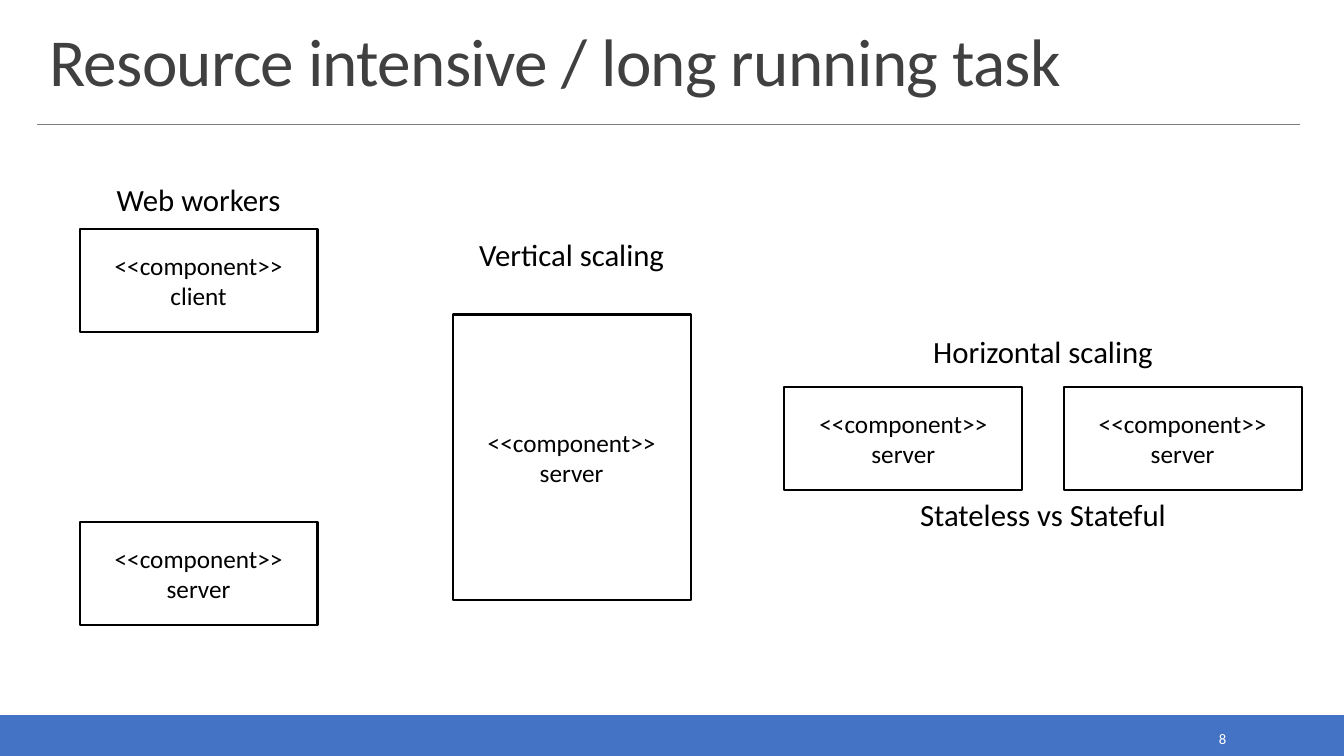
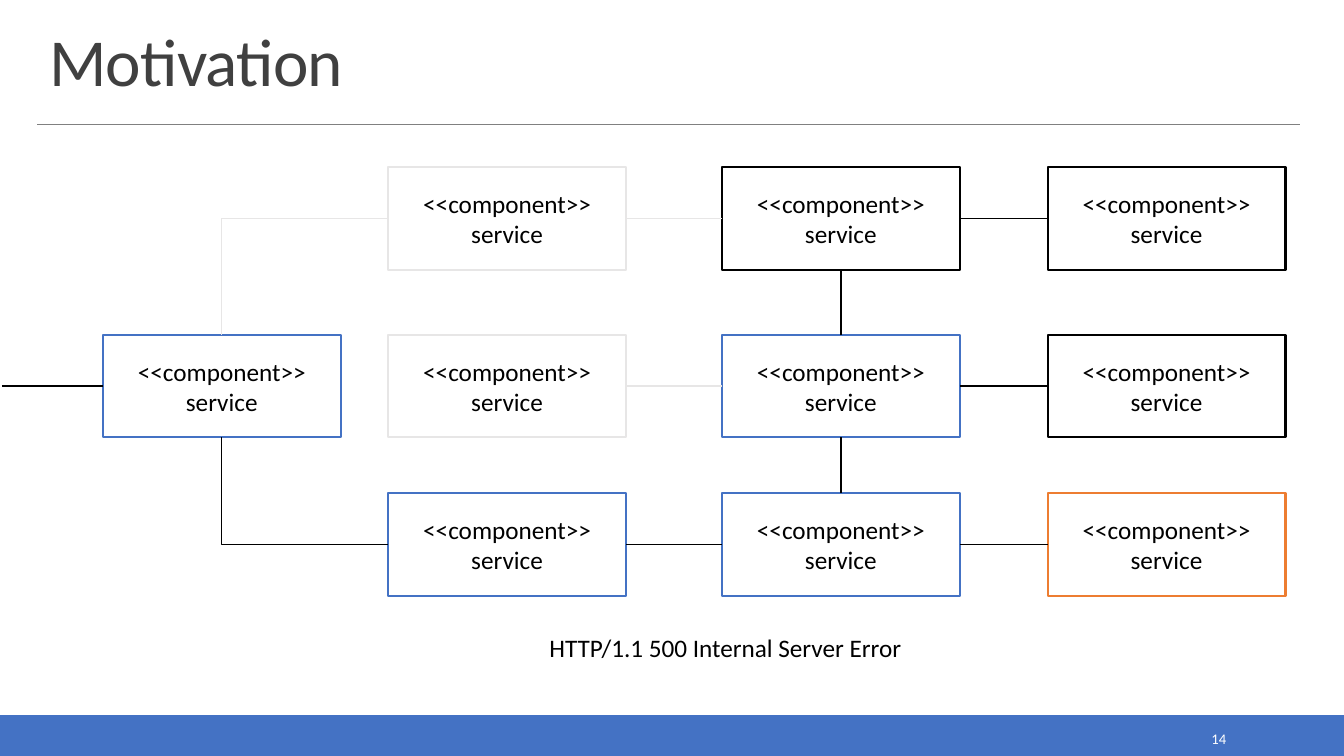
from lxml import etree
from pptx import Presentation
from pptx.dml.color import RGBColor
from pptx.enum import shapes, text
from pptx.oxml.ns import qn
from pptx.util import Inches, Pt

FONT = "Calibri"
BLACK, WHITE, GRAY, TITLE_GRAY = "000000", "FFFFFF", "808080", "404040"
BLUE, ORANGE, PALE = "4472C4", "ED7D31", "E7E6E6"
SLIDE_W, SLIDE_H = 13.33, 7.5
BOX_W, BOX_H = 2.36, 1.02
TOP, LEFT, BOTTOM, RIGHT = range(4)
ALIGN, ANCHOR = text.PP_ALIGN, text.MSO_ANCHOR


def color(hex_value):
    return RGBColor.from_string(hex_value)


def write(frame, lines, size, hex_value=BLACK, align=ALIGN.CENTER,
          anchor=ANCHOR.TOP, spacing=None):
    frame.word_wrap = True
    frame.vertical_anchor = anchor
    for index, line in enumerate(lines):
        paragraph = frame.paragraphs[0] if index == 0 else frame.add_paragraph()
        paragraph.text = line
        paragraph.alignment = align
        paragraph.line_spacing = spacing
        paragraph.font.name = FONT
        paragraph.font.size = Pt(size)
        paragraph.font.color.rgb = color(hex_value)


def label(slide, box, line, size, **style):
    caption = slide.shapes.add_textbox(*map(Inches, box))
    write(caption.text_frame, [line], size, **style)
    return caption


def rectangle(slide, box, outline, width, fill=None):
    rect = slide.shapes.add_shape(shapes.MSO_SHAPE.RECTANGLE, *map(Inches, box))
    rect.shadow.inherit = False
    if fill:
        rect.fill.solid()
        rect.fill.fore_color.rgb = color(fill)
    else:
        rect.fill.background()
    rect.line.color.rgb = color(outline)
    rect.line.width = Pt(width)
    return rect


def component(slide, left, top, name, outline=BLACK, height=BOX_H):
    rect = rectangle(slide, (left, top, BOX_W, height), outline, 1.5)
    write(rect.text_frame, ["<<component>>", name], 18, anchor=ANCHOR.MIDDLE)
    return rect


def line(slide, start, end, hex_value=BLACK, width=1, bent=False):
    kind = shapes.MSO_CONNECTOR.ELBOW if bent else shapes.MSO_CONNECTOR.STRAIGHT
    connector = slide.shapes.add_connector(kind, *map(Inches, (*start, *end)))
    connector.line.color.rgb = color(hex_value)
    connector.line.width = Pt(width)
    properties = connector._element.spPr
    if bent:
        properties.find(qn("a:prstGeom")).set("prst", "bentConnector2")
    etree.SubElement(properties, qn("a:effectLst"))
    return connector


def join(slide, first, first_side, second, second_side, hex_value=BLACK, bent=False):
    connector = line(slide, (0, 0), (1, 1), hex_value, bent=bent)
    connector.begin_connect(first, first_side)
    connector.end_connect(second, second_side)


def base_slide(deck, title, number):
    slide = deck.slides.add_slide(deck.slide_layouts[6])
    rectangle(slide, (0, 7.1, SLIDE_W, 0.4), BLUE, 1.25, BLUE)
    line(slide, (0.37, 1.23), (12.89, 1.23), GRAY, 0.5)
    heading = label(slide, (0.39, 0.2, 12.52, 0.84), title, 48, hex_value=TITLE_GRAY,
                    align=ALIGN.LEFT, anchor=ANCHOR.BOTTOM, spacing=0.85)
    heading.text_frame.paragraphs[0].runs[0].font._element.set("spc", "-50")
    label(slide, (10.83, 7.19, 1.43, 0.28), str(number), 10.5, hex_value=WHITE,
          align=ALIGN.RIGHT, anchor=ANCHOR.MIDDLE)
    return slide


def scaling_label(slide, left, top, width, line_text):
    label(slide, (left, top, width, 0.5), line_text, 22, spacing=0.9)


def web_workers(slide, left, top):
    scaling_label(slide, left, top, BOX_W, "Web workers")
    component(slide, left, top + 0.48, "client")
    component(slide, left, top + 3.39, "server")


def vertical_scaling(slide, left, top):
    scaling_label(slide, left, top, BOX_W, "Vertical scaling")
    component(slide, left, top + 0.79, "server", height=2.83)


def horizontal_scaling(slide, left, top, width):
    scaling_label(slide, left, top, width, "Horizontal scaling")
    for server_left in (left, left + width - BOX_W):
        component(slide, server_left, top + 0.55, "server")
    scaling_label(slide, left, top + 1.62, width, "Stateless vs Stateful")


def service_network(slide, left, top):
    columns = [left + offset for offset in (2.83, 6.14, 9.37)]
    rows = [top + offset for offset in (0, 1.66, 3.23)]
    outlines = [(PALE, BLACK, BLACK), (PALE, BLUE, BLACK), (BLUE, BLUE, ORANGE)]
    grid = [[component(slide, x, y, "service", outline)
             for x, outline in zip(columns, row_outlines)]
            for y, row_outlines in zip(rows, outlines)]
    gateway = component(slide, left, rows[1], "service", BLUE)

    for services, link in zip(grid, (PALE, PALE, BLACK)):
        join(slide, services[0], RIGHT, services[1], LEFT, link)
        join(slide, services[1], RIGHT, services[2], LEFT)
    for upper, lower in zip(grid, grid[1:]):
        join(slide, lower[1], TOP, upper[1], BOTTOM)
    join(slide, grid[0][0], LEFT, gateway, TOP, PALE, bent=True)
    join(slide, grid[2][0], LEFT, gateway, BOTTOM, bent=True)

    middle = rows[1] + BOX_H / 2
    request = line(slide, (left - 1, middle), (left, middle))
    request.end_connect(gateway, LEFT)
    label(slide, (columns[0], top + 4.56, 6.69, 0.4),
          "HTTP/1.1 500 Internal Server Error", 18)


def main():
    deck = Presentation()
    deck.slide_width, deck.slide_height = Inches(SLIDE_W), Inches(SLIDE_H)

    scaling = base_slide(deck, "Resource intensive / long running task", 8)
    web_workers(scaling, 0.79, 1.79)
    vertical_scaling(scaling, 4.49, 2.33)
    horizontal_scaling(scaling, 7.78, 3.29, 5.13)

    motivation = base_slide(deck, "Motivation", 14)
    service_network(motivation, 1.02, 1.66)

    deck.save("out.pptx")


if __name__ == "__main__":
    main()
